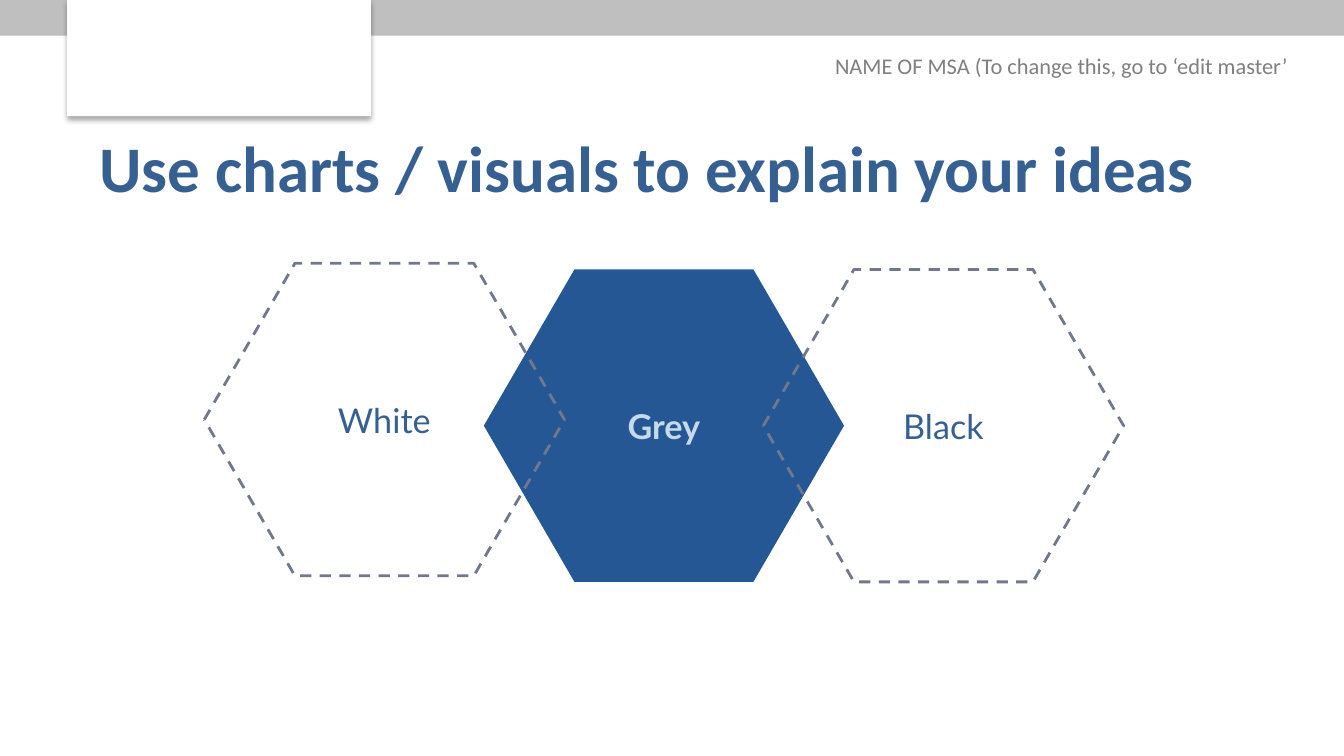
"""Build a slide with a title and three overlapping hexagons."""
from lxml.etree import SubElement
from pptx import Presentation
from pptx.dml.color import RGBColor
from pptx.enum.dml import MSO_LINE
from pptx.enum.shapes import MSO_SHAPE
from pptx.enum.text import MSO_ANCHOR, MSO_AUTO_SIZE, PP_ALIGN
from pptx.oxml.ns import qn
from pptx.util import Pt

PX = 4572


def color(hex_value):
    return RGBColor.from_string(hex_value)


def style(paragraph, text, font_name, size, hex_value, align, bold=False):
    paragraph.text = text
    paragraph.alignment = align
    font = paragraph.font
    font.name, font.size, font.bold = font_name, Pt(size), bold
    font.color.rgb = color(hex_value)


deck = Presentation()
deck.slide_width, deck.slide_height = 2000 * PX, 1125 * PX
slide = deck.slides.add_slide(deck.slide_layouts[5])
shapes = slide.shapes

heading = shapes.title
heading.left, heading.top, heading.width, heading.height = 128 * PX, 180 * PX, 1772 * PX, 126 * PX
heading.text_frame.auto_size = MSO_AUTO_SIZE.NONE
heading.text_frame.vertical_anchor = MSO_ANCHOR.TOP
style(heading.text_frame.paragraphs[0], "Use charts / visuals to explain your ideas",
      "Calibri", 34.8, "376092", PP_ALIGN.LEFT, True)

association = shapes.add_textbox(957 * PX, 68 * PX, 980 * PX, 60 * PX).text_frame
association.word_wrap = True
style(association.paragraphs[0], "NAME OF MSA (To change this, go to ‘edit master’",
      "Calibri", 12, "7F7F7F", PP_ALIGN.RIGHT)

for left, width, height, fill in [(0, 2000, 53, "BFBFBF"), (100, 452, 173, "FFFFFF")]:
    banner = shapes.add_shape(MSO_SHAPE.RECTANGLE, left * PX, 0, width * PX, height * PX)
    banner.shadow.inherit = False
    banner.fill.solid()
    banner.fill.fore_color.rgb = color(fill)
    banner.line.fill.background()

logo_card = banner
effects = logo_card.element.spPr.find(qn("a:effectLst"))
shadow = SubElement(effects, qn("a:outerShdw"), blurRad=str(Pt(3.1)), dist=str(Pt(1.8)),
                    dir="5400000", algn="t", rotWithShape="0")
shade = SubElement(shadow, qn("a:srgbClr"), val="000000")
SubElement(shade, qn("a:alpha"), val="35000")

for label, left, top, fill, ink in [
    ("Grey", 720, 401, "245794", "C6DAEC"),
    ("White", 304, 392, None, "376092"),
    ("Black", 1136, 401, None, "376092"),
]:
    hexagon = shapes.add_shape(MSO_SHAPE.HEXAGON, left * PX, top * PX, 536 * PX, 465 * PX)
    hexagon.shadow.inherit = False
    hexagon.adjustments[0] = 0.29
    if fill:
        hexagon.fill.solid()
        hexagon.fill.fore_color.rgb = color(fill)
        hexagon.line.fill.background()
    else:
        hexagon.fill.background()
        hexagon.line.color.rgb = color("71788D")
        hexagon.line.width = Pt(1.5)
        hexagon.line.dash_style = MSO_LINE.DASH
    frame = hexagon.text_frame
    frame.vertical_anchor = MSO_ANCHOR.MIDDLE
    frame.margin_left = frame.margin_right = frame.margin_top = frame.margin_bottom = 20 * PX
    style(frame.paragraphs[0], label, "Lato", 18.3, ink, PP_ALIGN.CENTER, bool(fill))

deck.save("out.pptx")
